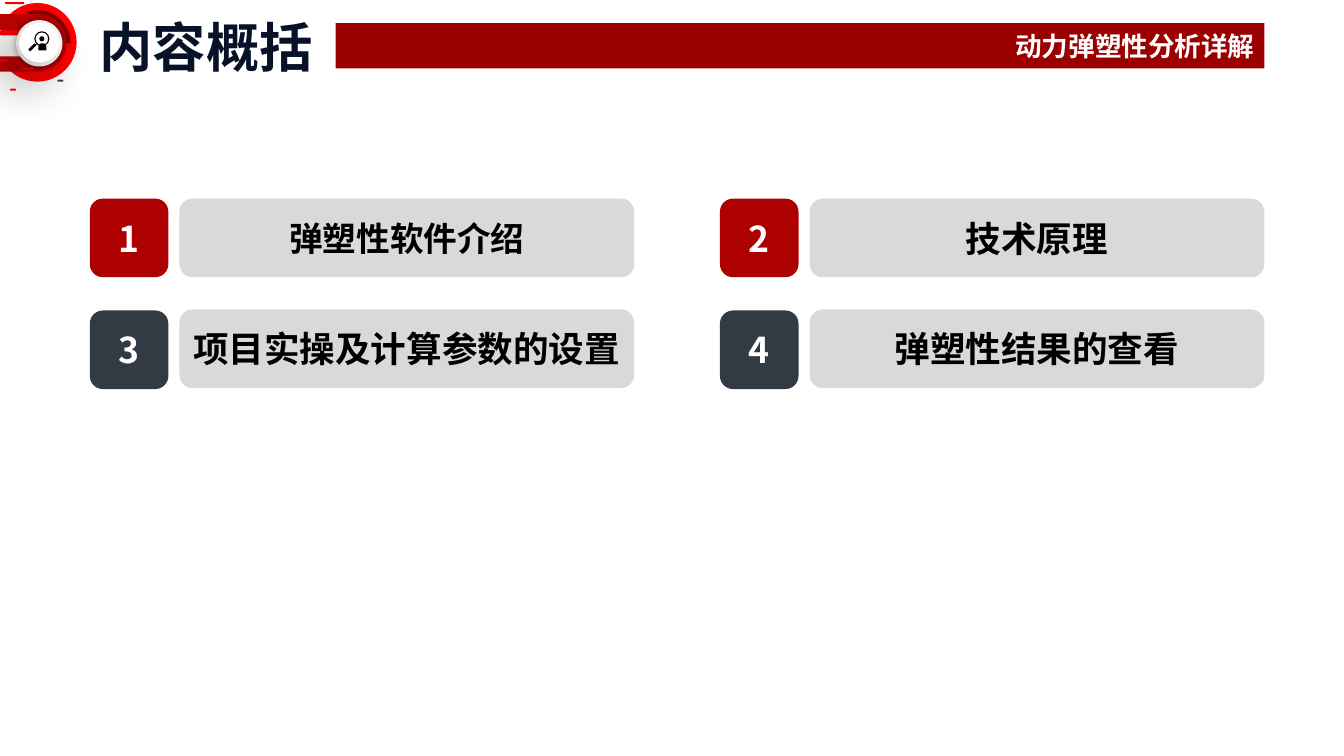
from dataclasses import dataclass

from lxml import etree
from pptx import Presentation
from pptx.dml.color import RGBColor
from pptx.enum.shapes import MSO_SHAPE
from pptx.enum.text import MSO_ANCHOR, PP_ALIGN
from pptx.oxml.ns import qn
from pptx.shapes.autoshape import Shape
from pptx.slide import Slide
from pptx.util import Inches, Pt

ELLIPSE = MSO_SHAPE.OVAL
PIE = MSO_SHAPE.PIE
DONUT = MSO_SHAPE.DONUT
RECTANGLE = MSO_SHAPE.RECTANGLE
ROUNDED = MSO_SHAPE.ROUNDED_RECTANGLE
ROUND_TOP = MSO_SHAPE.ROUND_2_SAME_RECTANGLE
CENTER = PP_ALIGN.CENTER
RIGHT = PP_ALIGN.RIGHT
MIDDLE = MSO_ANCHOR.MIDDLE

FONT = "Noto Sans CJK SC"
BLACK = RGBColor(0x00, 0x00, 0x00)
WHITE = RGBColor(0xFF, 0xFF, 0xFF)
BRIGHT_RED = RGBColor(0xFF, 0x00, 0x00)
BAND_RED = RGBColor(0xC0, 0x00, 0x00)
DARK_RED = RGBColor(0x86, 0x00, 0x00)
BAR_RED = RGBColor(0x9A, 0x00, 0x00)
BADGE_RED = RGBColor(0xAD, 0x01, 0x01)
SLATE = RGBColor(0x32, 0x3B, 0x44)
PURPLE = RGBColor(0x4A, 0x33, 0x59)
OFF_WHITE = RGBColor(0xFC, 0xFC, 0xFC)
LABEL_GRAY = RGBColor(0xD9, 0xD9, 0xD9)
NAVY = RGBColor(0x07, 0x11, 0x27)
ICON_BLACK = RGBColor(0x04, 0x00, 0x00)

BADGE_SIZE = 0.78
LABEL_WIDTH = 4.51
LABEL_OFFSET = 0.89
COLUMN_LEFTS = (0.89, 7.14)


@dataclass(frozen=True)
class Shadow:
    alpha: int
    blur: float
    distance: float
    direction: int


@dataclass(frozen=True)
class Part:
    kind: MSO_SHAPE
    left: float
    top: float
    width: float
    height: float
    fill: RGBColor
    adjustments: tuple[float, ...] = ()
    rotation: float = 0
    shadow: Shadow | None = None


@dataclass(frozen=True)
class Topic:
    text: str
    size: float = 25.4


@dataclass(frozen=True)
class Row:
    badge_top: float
    label_top: float
    color: RGBColor


EMBLEM = (
    Part(ELLIPSE, -0.02, 0.03, 0.78, 0.78, BRIGHT_RED),
    Part(ROUNDED, 0.57, 0.79, 0.06, 0.02, PURPLE, (0.5,)),
    Part(ROUNDED, 0.1, 0.88, 0.06, 0.02, BRIGHT_RED, (0.5,)),
    Part(PIE, 0.04, 0.1, 0.66, 0.66, DARK_RED, (72 * 0.6, 180 * 0.6), 180),
    Part(ROUNDED, 0.05, 0.02, 0.19, 0.02, BRIGHT_RED, (0.5,)),
    Part(ROUND_TOP, -0.14, -0.09, 0.57, 1.03, BAND_RED, (0.5, 0), 90),
    Part(ROUND_TOP, -0.06, -0.01, 0.26, 0.88, OFF_WHITE, (0.5, 0), 90),
    Part(ROUNDED, -0.01, 0.3, 0.31, 0.05, BRIGHT_RED, (0.5,)),
    Part(ROUNDED, -0.04, 0.59, 0.12, 0.02, BRIGHT_RED, (0.5,)),
    Part(ROUNDED, 0.21, 0.67, 0.12, 0.02, BRIGHT_RED, (0.5,)),
    Part(ELLIPSE, 0.16, 0.2, 0.46, 0.46, WHITE, shadow=Shadow(40, 5, 0, 0)),
    Part(ELLIPSE, 0.19, 0.23, 0.4, 0.39, WHITE, shadow=Shadow(60, 37, 16, 130)),
)
SEARCH_ICON = (
    Part(ELLIPSE, 0.39, 0.36, 0.05, 0.05, ICON_BLACK),
    Part(ROUND_TOP, 0.38, 0.43, 0.08, 0.07, ICON_BLACK, (0.5, 0)),
    Part(DONUT, 0.34, 0.31, 0.15, 0.15, ICON_BLACK, (0.08,)),
)
HANDLE_POINTS = (
    (0.37, 0.43), (0.35, 0.44), (0.34, 0.43),
    (0.28, 0.49), (0.3, 0.51), (0.36, 0.45),
)
TOPICS = (
    Topic("弹塑性软件介绍", 24),
    Topic("技术原理"),
    Topic("项目实操及计算参数的设置"),
    Topic("弹塑性结果的查看"),
)
ROWS = (Row(1.97, 1.97, BADGE_RED), Row(3.08, 3.07, SLATE))


def paint(shape: Shape, color: RGBColor) -> None:
    shape.shadow.inherit = False
    shape.fill.solid()
    shape.fill.fore_color.rgb = color
    shape.line.fill.background()


def add_shadow(shape: Shape, shadow: Shadow) -> None:
    effects = shape._element.spPr.find(qn("a:effectLst"))
    outer = etree.SubElement(
        effects, qn("a:outerShdw"),
        blurRad=str(Pt(shadow.blur)), dist=str(Pt(shadow.distance)),
        dir=str(shadow.direction * 60000), algn="ctr", rotWithShape="0",
    )
    color = etree.SubElement(outer, qn("a:srgbClr"), val=str(BLACK))
    etree.SubElement(color, qn("a:alpha"), val=str(shadow.alpha * 1000))


def add_part(slide: Slide, part: Part) -> Shape:
    shape = slide.shapes.add_shape(
        part.kind, Inches(part.left), Inches(part.top),
        Inches(part.width), Inches(part.height),
    )
    paint(shape, part.fill)
    shape.rotation = part.rotation
    for index, value in enumerate(part.adjustments):
        shape.adjustments[index] = value
    if part.shadow:
        add_shadow(shape, part.shadow)
    return shape


def write(shape: Shape, text: str, size: float, color: RGBColor,
          alignment: PP_ALIGN = CENTER, side_margin: float = 0.1) -> None:
    frame = shape.text_frame
    frame.word_wrap = True
    frame.vertical_anchor = MIDDLE
    frame.margin_left = frame.margin_right = Inches(side_margin)
    paragraph = frame.paragraphs[0]
    paragraph.text = text
    paragraph.alignment = alignment
    font = paragraph.font
    font.name, font.size, font.bold = FONT, Pt(size), True
    font.color.rgb = color
    properties = paragraph._p.pPr.find(qn("a:defRPr"))
    etree.SubElement(properties, qn("a:ea"), typeface=FONT)


def add_handle(slide: Slide) -> None:
    points = [(Inches(x), Inches(y)) for x, y in HANDLE_POINTS]
    builder = slide.shapes.build_freeform(*points[0])
    builder.add_line_segments(points[1:], close=True)
    paint(builder.convert_to_shape(), ICON_BLACK)


def add_header(slide: Slide) -> None:
    for part in EMBLEM:
        add_part(slide, part)
    title = slide.shapes.add_textbox(Inches(0.88), Inches(0.09), Inches(2.33), Inches(0.74))
    write(title, "内容概括", 38, NAVY, side_margin=0.05)
    bar = add_part(slide, Part(RECTANGLE, 3.33, 0.23, 9.21, 0.45, BAR_RED))
    write(bar, "动力弹塑性分析详解", 19, WHITE, RIGHT)
    for part in SEARCH_ICON:
        add_part(slide, part)
    add_handle(slide)


def add_topic(slide: Slide, index: int, topic: Topic) -> None:
    row = ROWS[index // len(COLUMN_LEFTS)]
    left = COLUMN_LEFTS[index % len(COLUMN_LEFTS)]
    badge = add_part(slide, Part(ROUNDED, left, row.badge_top, BADGE_SIZE, BADGE_SIZE, row.color))
    write(badge, str(index + 1), 25.4, WHITE)
    label = add_part(slide, Part(ROUNDED, left + LABEL_OFFSET, row.label_top,
                                 LABEL_WIDTH, BADGE_SIZE, LABEL_GRAY))
    write(label, topic.text, topic.size, BLACK, side_margin=0.05)


def main() -> None:
    presentation = Presentation()
    presentation.slide_width = Inches(13.33)
    presentation.slide_height = Inches(7.5)
    slide = presentation.slides.add_slide(presentation.slide_layouts[6])
    add_header(slide)
    for index, topic in enumerate(TOPICS):
        add_topic(slide, index, topic)
    presentation.save("out.pptx")


if __name__ == "__main__":
    main()
